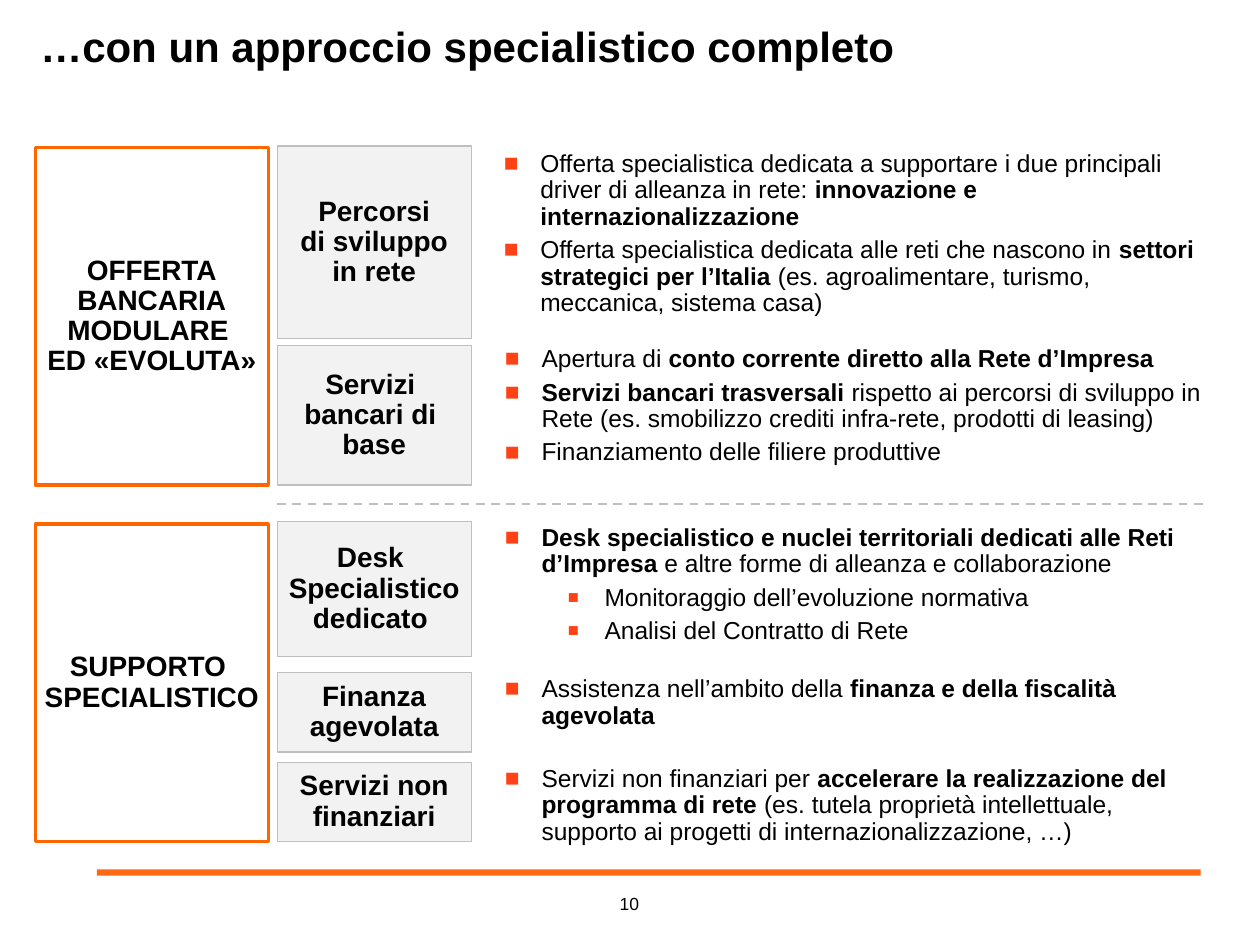
from lxml import etree
from pptx import Presentation
from pptx.dml.color import RGBColor
from pptx.enum.dml import MSO_LINE
from pptx.enum.shapes import MSO_CONNECTOR, MSO_SHAPE
from pptx.enum.text import MSO_ANCHOR, PP_ALIGN
from pptx.oxml.ns import qn
from pptx.util import Inches, Pt

RECT = MSO_SHAPE.RECTANGLE
STRAIGHT = MSO_CONNECTOR.STRAIGHT
DASH = MSO_LINE.DASH
MIDDLE = MSO_ANCHOR.MIDDLE
LEFT, CENTER = PP_ALIGN.LEFT, PP_ALIGN.CENTER

COLORS = {
    "text": "000000", "white": "FFFFFF", "frame": "FF6600", "bar": "FD6917",
    "bullet": "FF4215", "gray": "F2F2F2", "edge": "BFBFBF", "dash": "C0C0C0",
}

GROUPS = [
    (1.17, 2.68, ["OFFERTA", "BANCARIA", "MODULARE ", "ED «EVOLUTA»"]),
    (4.16, 2.52, ["SUPPORTO ", "SPECIALISTICO"]),
]

TOPICS = [
    (1.16, 1.53, ["Percorsi", "di sviluppo", "in rete"]),
    (2.74, 1.11, ["Servizi ", "bancari di ", "base"]),
    (4.14, 1.07, ["Desk ", "Specialistico", "dedicato "]),
    (5.34, 0.63, ["Finanza", "agevolata"]),
    (6.05, 0.63, ["Servizi non", "finanziari"]),
]

DETAILS = [
    (3.9, 1.15, 1.43, [
        (0, "Offerta specialistica dedicata a supportare i due principali driver di "
            "alleanza in rete: **innovazione e internazionalizzazione**"),
        (0, "Offerta specialistica dedicata alle reti che nascono in **settori strategici "
            "per l’Italia** (es. agroalimentare, turismo, meccanica, sistema casa)"),
    ]),
    (3.91, 2.7, 1.06, [
        (0, "Apertura di **conto corrente diretto alla Rete d’Impresa**"),
        (0, "**Servizi bancari trasversali** rispetto ai percorsi di sviluppo in Rete "
            "(es. smobilizzo crediti infra-rete, prodotti di leasing)"),
        (0, "Finanziamento delle filiere produttive"),
    ]),
    (3.91, 4.12, 1.06, [
        (0, "**Desk specialistico e nuclei territoriali dedicati alle Reti d’Impresa** "
            "e altre forme di alleanza e collaborazione"),
        (1, "Monitoraggio dell’evoluzione normativa"),
        (1, "Analisi del Contratto di Rete"),
    ]),
    (3.91, 5.32, 0.53, [
        (0, "Assistenza nell’ambito della **finanza e della fiscalità agevolata**"),
    ]),
    (3.91, 6.03, 0.74, [
        (0, "Servizi non finanziari per **accelerare la realizzazione del programma di "
            "rete** (es. tutela proprietà intellettuale, supporto ai progetti di "
            "internazionalizzazione, …)"),
    ]),
]


class Deck:
    """Style and current slide, with one method per kind of element."""

    def __init__(self, slide, font="Arial", space=0.9):
        self.slide = slide
        self.font = font
        self.space = space

    def color(self, name):
        return RGBColor.from_string(COLORS[name])

    def style(self, para, size, bold=None, align=LEFT):
        para.alignment = align
        para.line_spacing = self.space
        font = para.font
        font.name, font.size, font.bold = self.font, Pt(size), bold
        font.color.rgb = self.color("text")

    def fill(self, frame, lines, size, bold=None, align=LEFT):
        for i, line in enumerate(lines):
            para = frame.add_paragraph() if i else frame.paragraphs[0]
            para.add_run().text = line
            self.style(para, size, bold, align)

    def rect(self, x, y, w, h, fill, edge=None, width=0):
        box = self.slide.shapes.add_shape(RECT, Inches(x), Inches(y), Inches(w), Inches(h))
        box.shadow.inherit = False
        box.fill.solid()
        box.fill.fore_color.rgb = self.color(fill)
        if edge:
            box.line.color.rgb = self.color(edge)
            box.line.width = Pt(width)
        else:
            box.line.fill.background()
        return box

    def label(self, x, y, w, h, lines, fill, edge, width):
        frame = self.rect(x, y, w, h, fill, edge, width).text_frame
        frame.word_wrap = False
        frame.vertical_anchor = MIDDLE
        self.fill(frame, lines, 16, True, CENTER)

    def frame(self, x, y, w, h):
        box = self.slide.shapes.add_textbox(Inches(x), Inches(y), Inches(w), Inches(h))
        box.text_frame.word_wrap = True
        return box.text_frame

    def text(self, x, y, w, h, line, size, pad=0, bold=None, align=LEFT):
        frame = self.frame(x, y, w, h)
        frame.margin_left = frame.margin_right = Inches(pad)
        frame.margin_top = frame.margin_bottom = 0
        self.fill(frame, [line], size, bold, align)

    def bullet(self, para, level):
        props = para._p.get_or_add_pPr()
        props.set("marL", str(Inches(0.29 + 0.5 * level)))
        props.set("indent", str(Inches(-0.29)))
        tint = etree.SubElement(props, qn("a:buClr"))
        etree.SubElement(tint, qn("a:srgbClr"), val=COLORS["bullet"])
        if level:
            etree.SubElement(props, qn("a:buSzPct"), val="75000")
        etree.SubElement(props, qn("a:buFont"), typeface=self.font)
        etree.SubElement(props, qn("a:buChar"), char="■")

    def bullets(self, x, y, w, h, items):
        frame = self.frame(x, y, w, h)
        for i, (level, line) in enumerate(items):
            para = frame.add_paragraph() if i else frame.paragraphs[0]
            para.level = level
            self.bullet(para, level)
            self.style(para, 14)
            if i:
                para.space_before = Pt(4)
            for j, part in enumerate(line.split("**")):
                if part:
                    run = para.add_run()
                    run.text = part
                    run.font.bold = j % 2 == 1

    def line(self, x, y, end):
        rule = self.slide.shapes.add_connector(
            STRAIGHT, Inches(x), Inches(y), Inches(end), Inches(y))
        rule.line.color.rgb = self.color("dash")
        rule.line.width = Pt(1.25)
        rule.line.dash_style = DASH
        etree.SubElement(rule._element.spPr, qn("a:effectLst"))


def main():
    prs = Presentation()
    prs.slide_width, prs.slide_height = Inches(10), Inches(7.5)
    deck = Deck(prs.slides.add_slide(prs.slide_layouts[6]))
    deck.text(4.85, 7.11, 0.29, 0.17, "10", 10, align=CENTER)
    deck.rect(0.77, 6.9, 8.76, 0.05, "bar")
    deck.line(2.2, 4, 9.57)
    for y, h, lines in GROUPS:
        deck.label(0.28, y, 1.85, h, lines, "white", "frame", 2)
    for y, h, lines in TOPICS:
        deck.label(2.2, y, 1.54, h, lines, "gray", "edge", 0.75)
    for x, y, h, items in DETAILS:
        deck.bullets(x, y, 5.73, h, items)
    deck.text(0.28, 0.21, 9.66, 0.36, "…con un approccio specialistico completo", 24, 0.04, True)
    prs.save("out.pptx")


if __name__ == "__main__":
    main()
